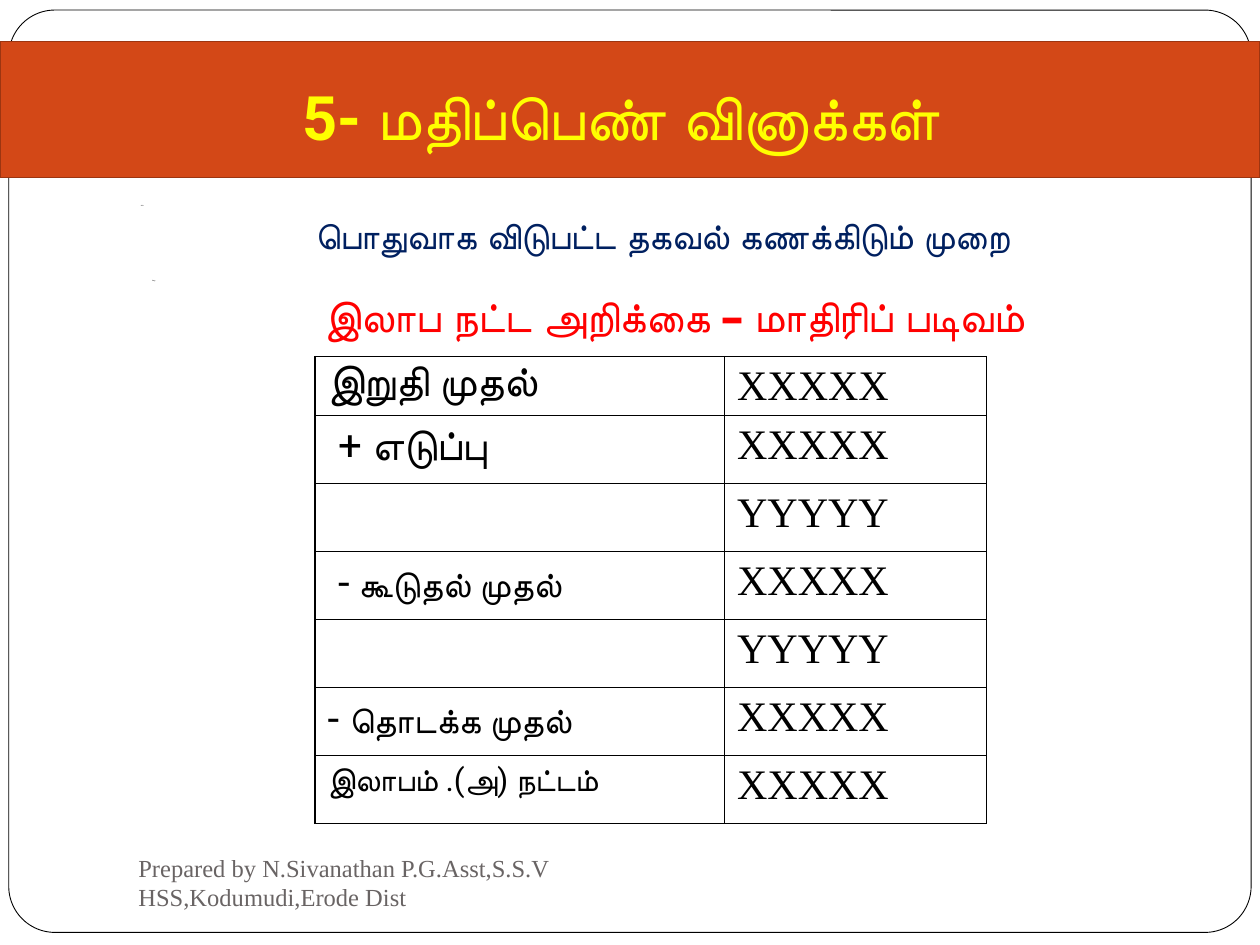
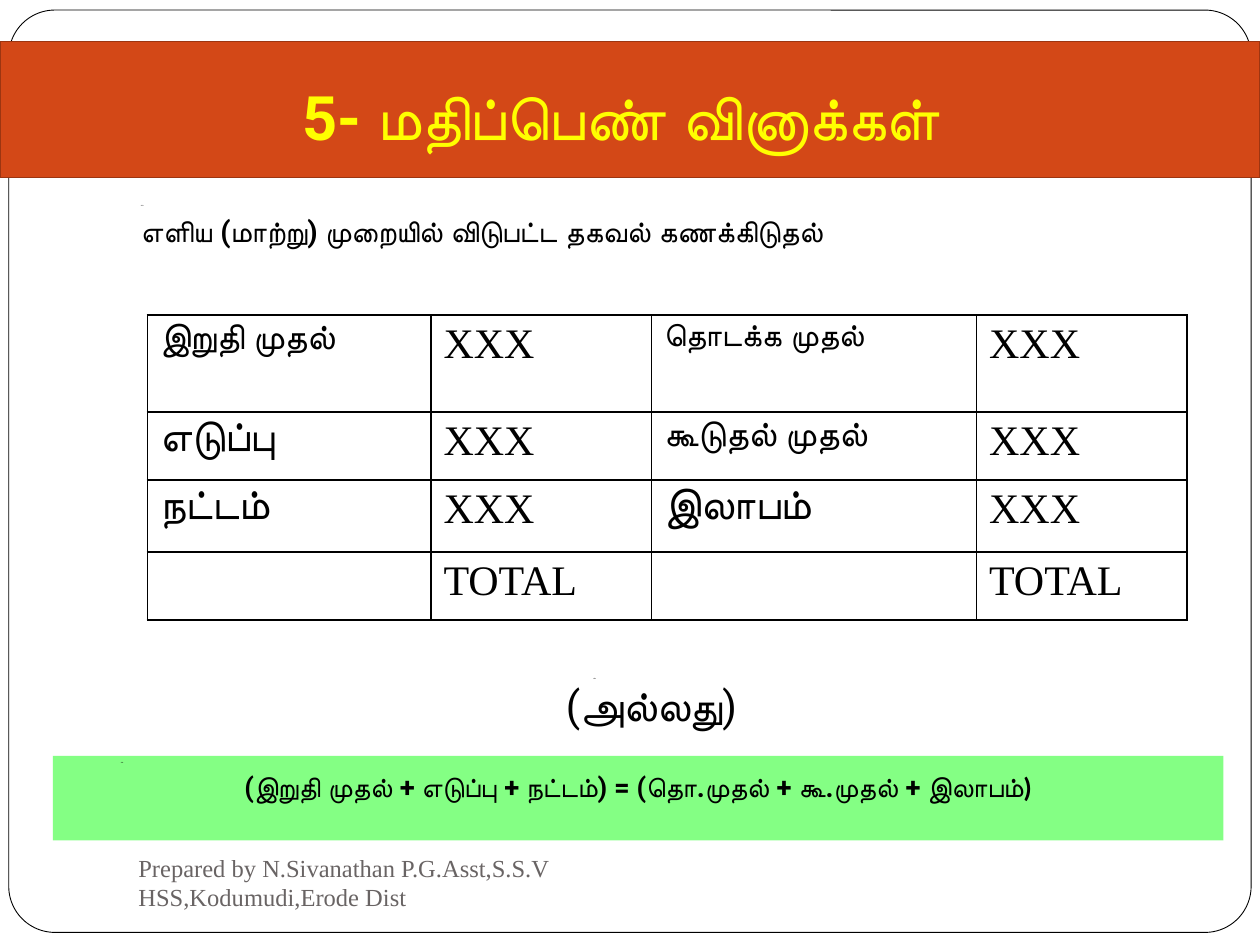
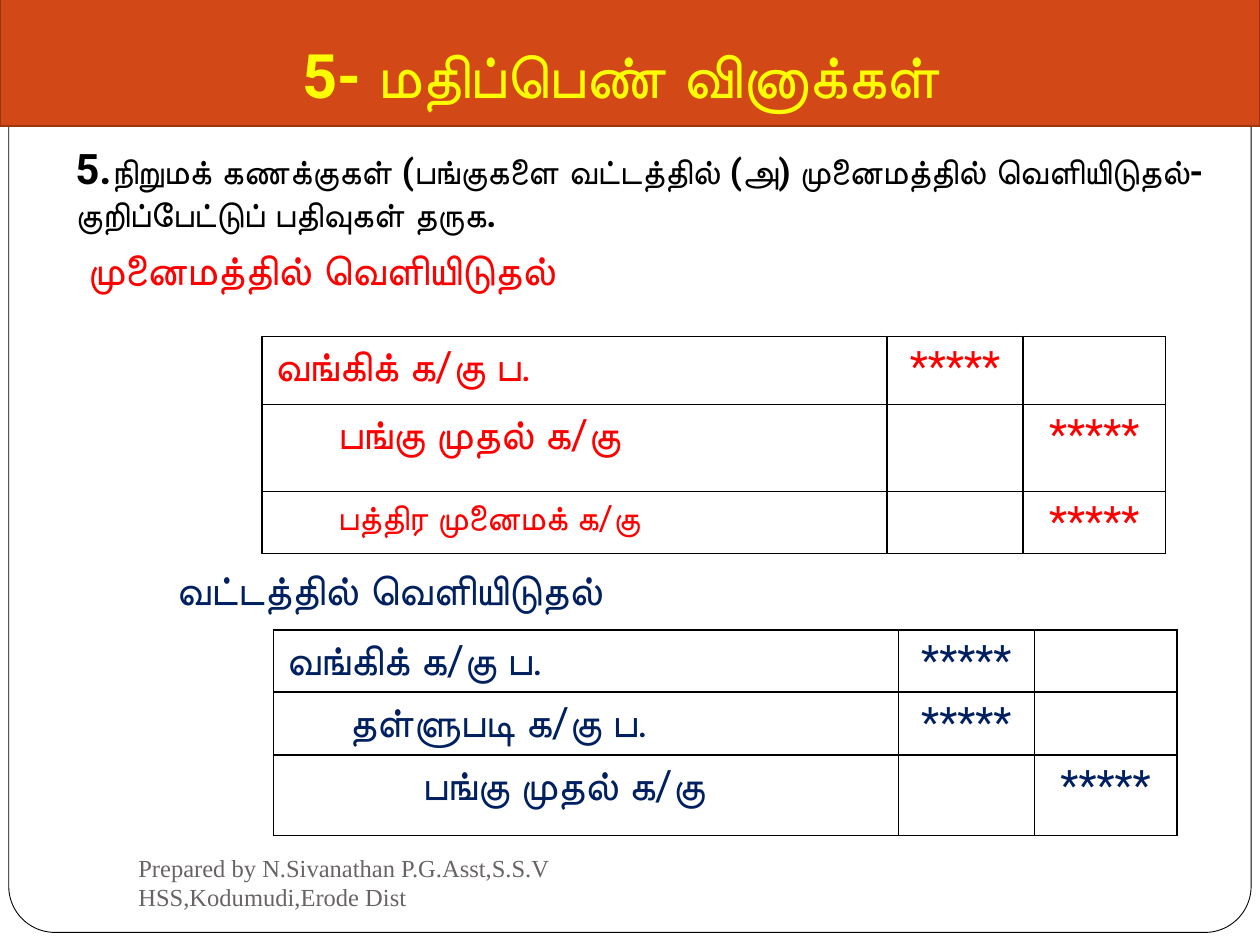
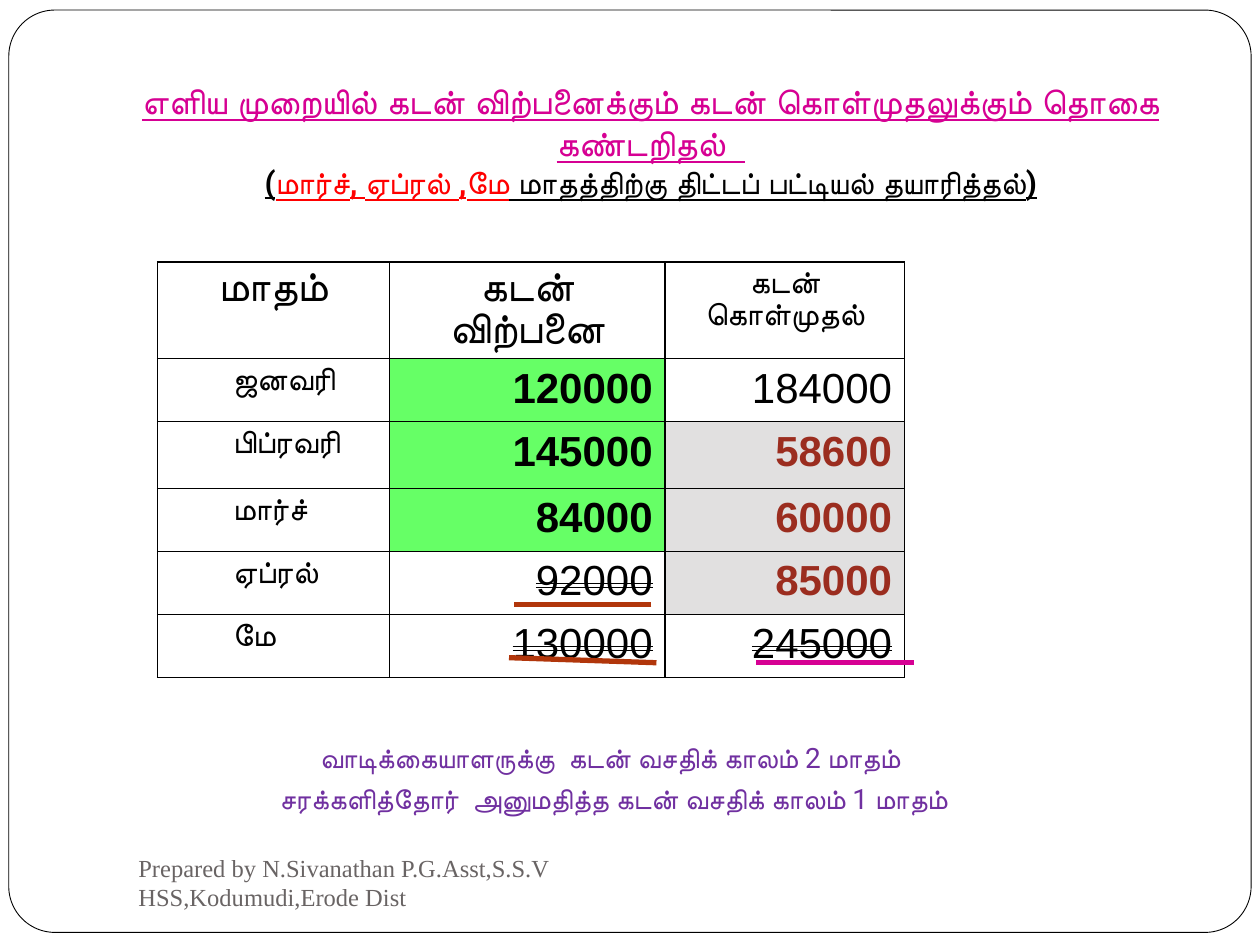
from dataclasses import dataclass
from typing import Optional

from lxml.etree import SubElement
from pptx import Presentation
from pptx.dml.color import RGBColor
from pptx.enum.shapes import MSO_CONNECTOR, MSO_SHAPE
from pptx.enum.text import MSO_ANCHOR, MSO_AUTO_SIZE, PP_ALIGN
from pptx.oxml.ns import qn
from pptx.util import Inches, Pt

# Shared palette, fonts and wording
BLACK, WHITE, RED, YELLOW = "000000", "FFFFFF", "FF0000", "FFFF00"
NAVY, MAGENTA, PURPLE, RUST = "002060", "D60093", "7030A0", "B1360B"
ORANGE, ORANGE_EDGE, BRICK = "D34817", "9C3511", "9B2D1F"
GREEN, PALE_GREY, FOOTER_GREY = "66FF66", "E1E0E0", "696464"
ROBOTO, TIMES, ARIAL, CALIBRI = "Roboto", "Times New Roman", "Arial", "Calibri"
LEFT, CENTER, RIGHT = PP_ALIGN.LEFT, PP_ALIGN.CENTER, PP_ALIGN.RIGHT
TITLE = "5- மதிப்பெண் வினாக்கள் "
FOOTER = "Prepared by N.Sivanathan P.G.Asst,S.S.V HSS,Kodumudi,Erode Dist"
TITLE_ONLY_LAYOUT = 5


@dataclass(frozen=True)
class Run:
    text: str
    size: float = 24
    color: str = BLACK
    bold: bool = False
    font: str = ROBOTO
    underline: bool = False
    double_strike: bool = False


@dataclass(frozen=True)
class Para:
    runs: tuple[Run, ...]
    align: PP_ALIGN = LEFT
    level: int = 0
    margin: float = 0
    indent: float = 0
    before: float = 0
    after: float = 0
    spacing: float = 1.0


@dataclass(frozen=True)
class Cell:
    para: Optional[Para] = None
    fill: Optional[str] = None


@dataclass(frozen=True)
class Area:
    left: float
    top: float
    width: float
    height: float

    def lengths(self) -> tuple:
        return tuple(map(Inches, (self.left, self.top, self.width, self.height)))


@dataclass(frozen=True)
class Grid:
    left: float
    top: float
    columns: tuple[float, ...]
    rows: tuple[float, ...]
    cells: list[list[Cell]]


@dataclass(frozen=True)
class Stroke:
    start: tuple[float, float]
    end: tuple[float, float]
    color: str


def rgb(value: str) -> RGBColor:
    return RGBColor.from_string(value)


# Text
def set_all(target, values: dict) -> None:
    for name, value in values.items():
        setattr(target, name, value)


def write_paragraph(paragraph, para: Para) -> None:
    set_all(paragraph, {
        "alignment": para.align,
        "level": para.level,
        "line_spacing": para.spacing,
        "space_before": Pt(para.before),
        "space_after": Pt(para.after),
    })
    properties = paragraph._p.get_or_add_pPr()
    properties.set("marL", str(Inches(para.margin)))
    properties.set("indent", str(Inches(para.indent)))
    for part in para.runs:
        run = paragraph.add_run()
        run.text = part.text
        set_all(run.font, {
            "name": part.font,
            "size": Pt(part.size),
            "bold": part.bold,
            "underline": part.underline,
        })
        run.font.color.rgb = rgb(part.color)
        if part.double_strike:
            run._r.get_or_add_rPr().set("strike", "dblStrike")


def write_text(frame, paras: list[Para], anchor=MSO_ANCHOR.TOP) -> None:
    set_all(frame, {
        "word_wrap": True,
        "auto_size": MSO_AUTO_SIZE.NONE,
        "vertical_anchor": anchor,
    })
    for index, para in enumerate(paras):
        paragraph = frame.add_paragraph() if index else frame.paragraphs[0]
        write_paragraph(paragraph, para)


def line_of(text: str, align: PP_ALIGN = LEFT, **style) -> Para:
    return Para((Run(text, **style),), align)


def hanging(text: str, align: PP_ALIGN = LEFT, level: int = 1,
            spacing: float = 1.0, **style) -> Para:
    """Paragraph with a hanging indent and a fifth of its size above it."""
    run = Run(text, **style)
    return Para((run,), align, level, 0.44 + 0.5 * level, -0.5,
                before=0.2 * run.size, spacing=spacing)


def speck(text: str = "vëa", spacing: float = 1.0) -> Para:
    return hanging(text, size=1, spacing=spacing)


# Slide parts
def add_text(slide, area: Area, paras: list[Para], anchor=MSO_ANCHOR.TOP) -> None:
    write_text(slide.shapes.add_textbox(*area.lengths()).text_frame, paras, anchor)


def add_panel(slide, area: Area, fill: str, edge: Optional[str] = None,
              edge_width: float = 1, kind=MSO_SHAPE.RECTANGLE):
    panel = slide.shapes.add_shape(kind, *area.lengths())
    panel.shadow.inherit = False
    panel.fill.solid()
    panel.fill.fore_color.rgb = rgb(fill)
    if edge:
        panel.line.color.rgb = rgb(edge)
        panel.line.width = Pt(edge_width)
    else:
        panel.line.fill.background()
    return panel


def add_stroke(slide, stroke: Stroke) -> None:
    connector = slide.shapes.add_connector(
        MSO_CONNECTOR.STRAIGHT, *map(Inches, stroke.start + stroke.end))
    connector.line.color.rgb = rgb(stroke.color)
    connector.line.width = Pt(3)
    SubElement(connector._element.spPr, qn("a:effectLst"))


def add_borders(cell) -> None:
    properties = cell._tc.get_or_add_tcPr()
    for side in ("lnL", "lnR", "lnT", "lnB"):
        border = SubElement(properties, qn(f"a:{side}"), w=str(Pt(1)))
        fill = SubElement(border, qn("a:solidFill"))
        SubElement(fill, qn("a:srgbClr"), val=BLACK)


def add_grid(slide, grid: Grid) -> None:
    area = Area(grid.left, grid.top, sum(grid.columns), sum(grid.rows))
    table = slide.shapes.add_table(
        len(grid.rows), len(grid.columns), *area.lengths()).table
    set_all(table, {"first_row": False, "horz_banding": False})
    for column, width in zip(table.columns, grid.columns):
        column.width = Inches(width)
    for row, height, contents in zip(table.rows, grid.rows, grid.cells):
        row.height = Inches(height)
        for cell, content in zip(row.cells, contents):
            add_borders(cell)
            if content.fill:
                cell.fill.solid()
                cell.fill.fore_color.rgb = rgb(content.fill)
            else:
                cell.fill.background()
            if content.para:
                write_paragraph(cell.text_frame.paragraphs[0], content.para)


def place_title(slide, area: Area, paras: list[Para], anchor) -> None:
    title = slide.shapes.title
    set_all(title, dict(zip(("left", "top", "width", "height"), area.lengths())))
    write_text(title.text_frame, paras, anchor)
    slide.shapes._spTree.append(title._element)


def add_heading(slide, band_top: float = 0.33, title_top: float = 0.67) -> None:
    add_panel(slide, Area(0, band_top, 10, 1.08), ORANGE, ORANGE_EDGE)
    place_title(slide, Area(0.5, title_top, 9, 0.64),
                [line_of(TITLE, CENTER, size=35, color=YELLOW, bold=True)],
                MSO_ANCHOR.BOTTOM)
    slide.shapes.title.text_frame.margin_bottom = Inches(0.1)


def add_footer(slide) -> None:
    add_text(slide, Area(1, 6.75, 4.33, 0.5),
             [line_of(FOOTER, size=14, color=FOOTER_GREY, font=TIMES)],
             MSO_ANCHOR.MIDDLE)


def new_slide(deck):
    return deck.slides.add_slide(deck.slide_layouts[TITLE_ONLY_LAYOUT])


def frame_master(deck, slide) -> None:
    """Draw the rounded page frame once and hand it to the master."""
    page = add_panel(slide, Area(0.07, 0.08, 9.86, 7.32), WHITE, BLACK, 0.5,
                     MSO_SHAPE.ROUNDED_RECTANGLE)
    page.adjustments[0] = 0.05
    page._element.nvSpPr.cNvPr.set("id", "20")
    deck.slide_master.shapes._spTree.insert(2, page._element)


# Cells
def text_cell(text: str, align: PP_ALIGN = LEFT, **style) -> Cell:
    return Cell(line_of(text, align, **style)) if text else Cell()


def amount(text: str) -> Cell:
    return text_cell(text, font=TIMES)


def indented(text: str, margin: float = 0.5, **style) -> Cell:
    return Cell(Para((Run(text, **style),), level=1, margin=margin))


# Slide 1: statement of profit or loss
def build_statement(slide) -> None:
    add_heading(slide)
    add_text(slide, Area(0.58, 1.58, 8.92, 0.67), [
        speck(spacing=0.9),
        hanging("பொதுவாக விடுபட்ட தகவல் கணக்கிடும் முறை", CENTER,
                size=20.4, color=NAVY, bold=True)])
    labels = [
        text_cell("இறுதி முதல்"),
        text_cell(" + எடுப்பு"),
        Cell(),
        Cell(Para((Run(" -"), Run(" கூடுதல் முதல்", 20)))),
        Cell(),
        Cell(Para((Run("- "), Run("தொடக்க முதல்", 20)))),
        text_cell("இலாபம் .(அ) நட்டம்", size=18),
    ]
    entries = [[label, amount(("X" if label.para else "Y") * 5)] for label in labels]
    add_grid(slide, Grid(2.5, 2.83, (3.25, 2.08), (0.37,) + (0.54,) * 6, entries))
    add_text(slide, Area(0.67, 2.17, 8.92, 0.67), [
        speck("ëa g"),
        hanging("இலாப நட்ட அறிக்கை – மாதிரிப் படிவம்", CENTER,
                color=RED, bold=True)])


# Slide 2: simple method for the missing figure
def build_simple_method(slide) -> None:
    add_heading(slide)
    add_text(slide, Area(0.58, 1.58, 8.92, 0.67), [
        speck(spacing=0.8),
        hanging("எளிய (மாற்று) முறையில் விடுபட்ட தகவல் கணக்கிடுதல்",
                size=16.8, bold=True)])
    pairs = [
        (text_cell("இறுதி முதல்", size=20),
         text_cell("தொடக்க முதல்", size=18, bold=True)),
        (text_cell("எடுப்பு"), text_cell("கூடுதல் முதல்", size=20)),
        (text_cell("நட்டம்"), text_cell("இலாபம்")),
    ]
    entries = [[debit, amount("XXX"), credit, amount("XXX")]
               for debit, credit in pairs]
    entries.append([Cell(), amount("TOTAL")] * 2)
    add_grid(slide, Grid(1.17, 2.5, (2.25, 1.75, 2.58, 1.67),
                         (0.77, 0.54, 0.57, 0.54), entries))

    # Equation strip
    strip = add_panel(slide, Area(0.42, 6, 9.29, 0.67), GREEN)
    color = strip._element.spPr.find(qn("a:solidFill"))[0]
    SubElement(color, qn("a:alpha"), val="80000")
    equation = Para((
        Run("(இறுதி முதல் + எடுப்பு + நட்டம்) = (தொ.முதல் + கூ.முதல் + இலாபம்",
            15.7, bold=True),
        Run(")", 15.7, bold=True, font=CALIBRI),
    ), CENTER, margin=0.44, indent=-0.5, before=3.1)
    write_text(strip.text_frame, [speck(), equation])
    add_text(slide, Area(4.17, 5.33, 2, 0.67),
             [speck(), Para((Run("(அல்லது)"),), CENTER, level=1)])


# Slide 3: journal entries for share issues
def add_journal(slide, left: float, top: float, rows: tuple[float, ...],
                color: str, accounts: list[tuple[str, float, bool]]) -> None:
    stars = text_cell("*****", CENTER, color=color)
    entries = [
        [indented(name, margin, size=20 if name.startswith("பத்திர") else 24,
                  color=color) if margin else text_cell(name, color=color),
         stars if is_debit else Cell(),
         Cell() if is_debit else stars]
        for name, margin, is_debit in accounts]
    add_grid(slide, Grid(left, top, (4.96, 1.08, 1.13), rows, entries))


def build_share_issues(slide) -> None:
    add_heading(slide, -0.08, 0.34)
    question = ("நிறுமக் கணக்குகள் (பங்குகளை வட்டத்தில் (அ) முனைமத்தில் "
                "வெளியிடுதல்- குறிப்பேட்டுப் பதிவுகள் தருக.")
    add_text(slide, Area(0.5, 1.08, 9.33, 1.58), [
        Para((Run("5.", bold=True), Run(question, 20, bold=True)),
             level=1, after=5),
        Para((Run(" முனைமத்தில் வெளியிடுதல்", color=RED, bold=True),),
             level=1, after=5)])
    add_journal(slide, 2.08, 2.67, (0.54, 0.69, 0.49), RED, [
        ("வங்கிக் க/கு ப.", 0, True),
        ("பங்கு முதல் க/கு", 0.5, False),
        ("பத்திர முனைமக் க/கு", 0.5, False)])
    add_journal(slide, 2.17, 5, (0.49, 0.5, 0.64), NAVY, [
        ("வங்கிக் க/கு ப.", 0, True),
        ("தள்ளுபடி க/கு ப.", 0.5, True),
        ("பங்கு முதல் க/கு", 1.08, False)])
    add_text(slide, Area(1.3, 4.42, 7.75, 0.5),
             [line_of("வட்டத்தில் வெளியிடுதல்", color=NAVY, bold=True)])


# Slide 4: credit sales and purchases
def figure(value: str, fill: Optional[str] = None, color: str = BLACK,
           struck: bool = False) -> Cell:
    run = Run(value, color=color, bold=fill is not None, font=ARIAL,
              double_strike=struck)
    return Cell(Para((run,), RIGHT), fill)


def sale(value: str, struck: bool = False) -> Cell:
    return figure(value, None if struck else GREEN, struck=struck)


def purchase(value: str) -> Cell:
    return figure(value, PALE_GREY, BRICK)


def build_credit_budget(slide) -> None:
    heading = {"size": 18, "bold": True, "underline": True}
    place_title(slide, Area(0.58, 0.58, 9.17, 1.17), [
        line_of("எளிய முறையில் கடன் விற்பனைக்கும் கடன் கொள்முதலுக்கும் "
                "தொகை கண்டறிதல்  ", CENTER,
                **(heading | {"size": 20, "color": MAGENTA})),
        Para((Run("(", **heading),
              Run("மார்ச், ஏப்ரல் ,மே", color=RED, **heading),
              Run(" மாதத்திற்கு திட்டப் பட்டியல் தயாரித்தல்)", **heading)),
             CENTER)], MSO_ANCHOR.TOP)
    notes = ("வாடிக்கையாளருக்கு  கடன் வசதிக் காலம் 2 மாதம் ",
             "சரக்களித்தோர்  அனுமதித்த கடன் வசதிக் காலம் 1 மாதம்")
    add_text(slide, Area(0.83, 5.83, 8.08, 0.92), [
        Para((Run(note, 16, PURPLE),), CENTER, margin=0.44, indent=-0.5, before=4)
        for note in notes])
    months = [
        ("ஜனவரி", sale("120000"), figure("184000")),
        ("பிப்ரவரி", sale("145000"), purchase("58600")),
        ("மார்ச்", sale("84000"), purchase("60000")),
        ("ஏப்ரல்", sale("92000", True), purchase("85000")),
        ("மே", sale("130000", True), figure("245000", struck=True)),
    ]
    header = [text_cell("மாதம்", CENTER), text_cell("கடன் விற்பனை", CENTER),
              text_cell("கடன் கொள்முதல்", CENTER, size=18)]
    entries = [header] + [[indented(month, size=18), sold, bought]
                          for month, sold, bought in months]
    add_grid(slide, Grid(1.25, 2.08, (1.84, 2.19, 1.9),
                         (0.64, 0.5, 0.53, 0.5, 0.5, 0.5), entries))
    for stroke in (Stroke((5.17, 4.8), (4.08, 4.8), RUST),
                   Stroke((5.21, 5.26), (4.04, 5.22), RUST),
                   Stroke((7.25, 5.26), (6, 5.26), MAGENTA)):
        add_stroke(slide, stroke)


def main() -> None:
    deck = Presentation()
    deck.slide_width, deck.slide_height = Inches(10), Inches(7.5)
    builders = (build_statement, build_simple_method,
                build_share_issues, build_credit_budget)
    for index, build in enumerate(builders):
        slide = new_slide(deck)
        if index == 0:
            frame_master(deck, slide)
        build(slide)
        add_footer(slide)
    deck.save("out.pptx")


if __name__ == "__main__":
    main()
